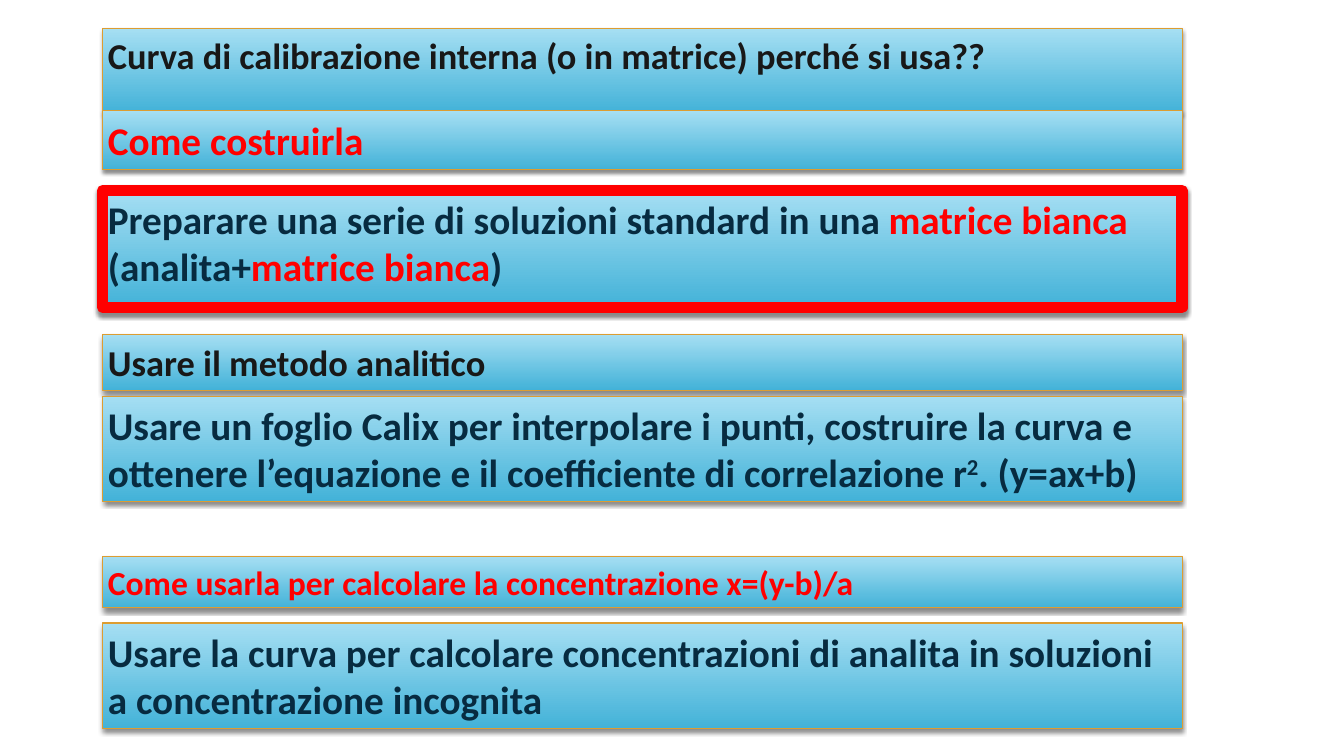
from dataclasses import dataclass

from lxml import etree
from pptx import Presentation
from pptx.dml.color import RGBColor
from pptx.enum import shapes, text
from pptx.oxml import ns
from pptx.util import Cm, Pt


@dataclass(frozen=True)
class Theme:
    font: str = "Calibri"
    small: int = 24
    medium: int = 26
    large: int = 28
    black: str = "181818"
    navy: str = "072B40"
    red: str = "FF0000"
    orange: str = "DD9D31"
    gradient: tuple = ("A6DFF3", "43B2D8")
    thin: float = 0.75
    thick: float = 8


theme = Theme()
LEFT, WIDTH, INSET = Cm(2.59), Cm(27.2), Cm(0.13)


def style_panel(shape, top, height, line_color, line_width):
    """Place a panel and give it the gradient, outline and soft shadow."""
    shape.left, shape.top, shape.width, shape.height = LEFT, Cm(top), WIDTH, Cm(height)
    shape.fill.gradient()
    shape.fill.gradient_angle = 270
    for stop, color in zip(shape.fill.gradient_stops, theme.gradient):
        stop.color.rgb = RGBColor.from_string(color)
    shape.line.color.rgb = RGBColor.from_string(line_color)
    shape.line.width = Pt(line_width)
    shape.shadow.inherit = False
    effects = shape.element.spPr.find(ns.qn("a:effectLst"))
    shadow = etree.SubElement(effects, ns.qn("a:outerShdw"), blurRad=str(Pt(3)),
                              dist=str(Pt(2)), dir="5400000", rotWithShape="0")
    color = etree.SubElement(shadow, ns.qn("a:srgbClr"), val="000000")
    etree.SubElement(color, ns.qn("a:alpha"), val="45000")


def write_runs(shape, size, runs):
    """Write (words, colour, baseline) runs in one left-aligned paragraph."""
    frame = shape.text_frame
    frame.word_wrap = True
    frame.auto_size = text.MSO_AUTO_SIZE.SHAPE_TO_FIT_TEXT
    frame.vertical_anchor = text.MSO_ANCHOR.TOP
    frame.margin_left = frame.margin_right = INSET
    frame.margin_top = frame.margin_bottom = INSET
    paragraph = frame.paragraphs[0]
    paragraph.alignment = text.PP_ALIGN.LEFT
    for words, color, baseline in runs:
        run = paragraph.add_run()
        run.text = words
        run.font.name, run.font.size, run.font.bold = theme.font, Pt(size), True
        run.font.color.rgb = RGBColor.from_string(color)
        if baseline:
            run.font._element.set("baseline", str(baseline * 1000))


# Presentation and slide
presentation = Presentation()
presentation.slide_width, presentation.slide_height = Cm(33.87), Cm(19.05)
slide = presentation.slides.add_slide(presentation.slide_layouts[5])

# Title
title = slide.shapes.title
style_panel(title, 0.71, 1.4, theme.orange, theme.thin)
write_runs(title, theme.medium, [
    ("Curva di calibrazione interna (o in matrice) perché si usa??", theme.black, 0)])

# Steps: top, height, outline colour and width, text size, runs
steps = [
    (2.79, 1.48, theme.orange, theme.thin, theme.large,
     [("Come costruirla", theme.red, 0)]),
    (4.8, 2.95, theme.red, theme.thick, theme.large,
     [("Preparare una serie di soluzioni standard in una ", theme.navy, 0),
      ("matrice bianca", theme.red, 0),
      (" (analita+", theme.navy, 0),
      ("matrice bianca", theme.red, 0),
      (")", theme.navy, 0)]),
    (8.43, 1.4, theme.orange, theme.thin, theme.medium,
     [("Usare il metodo analitico", theme.black, 0)]),
    (9.98, 2.65, theme.orange, theme.thin, theme.large,
     [("Usare un foglio Calix per interpolare i punti, costruire la curva e "
       "ottenere l’equazione e il coefficiente di correlazione r", theme.navy, 0),
      ("2", theme.navy, 30),
      (". (y=ax+b)", theme.navy, 0)]),
    (14.02, 1.3, theme.orange, theme.thin, theme.small,
     [("Come usarla per calcolare la concentrazione x=(y-b)/a", theme.red, 0)]),
    (15.7, 2.66, theme.orange, theme.thin, theme.large,
     [("Usare la curva per calcolare concentrazioni di analita in soluzioni "
       "a concentrazione incognita", theme.navy, 0)]),
]
for top, height, line_color, line_width, size, runs in steps:
    step = slide.shapes.add_shape(shapes.MSO_SHAPE.RECTANGLE, LEFT, Cm(top), WIDTH, Cm(height))
    style_panel(step, top, height, line_color, line_width)
    write_runs(step, size, runs)

presentation.save("out.pptx")
